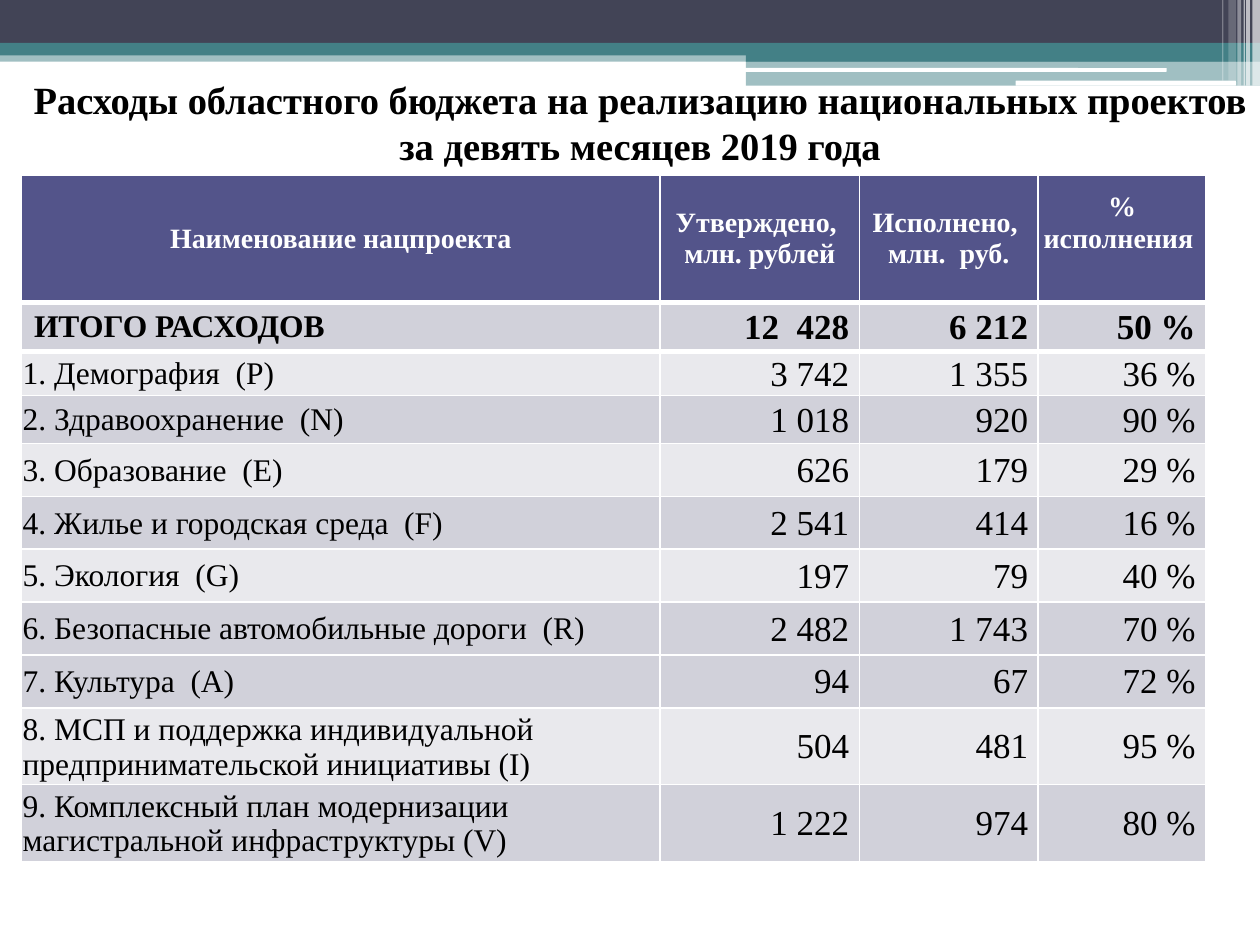
from pptx import Presentation
from pptx.dml.color import RGBColor
from pptx.enum.shapes import MSO_SHAPE
from pptx.enum.text import MSO_ANCHOR, MSO_AUTO_SIZE, PP_ALIGN
from pptx.oxml import parse_xml
from pptx.oxml.ns import nsdecls
from pptx.util import Inches, Pt

COLS, ROWS = 100, 75  # slide grid
WHITE, BLACK = "FFFFFF", "000000"
SLATE, TEAL, VIOLET = "424456", "438086", "53548A"
DARK_BAND, LIGHT_BAND = "D1D1DA", "E9E9ED"
LIGHT_ROWS = {2, 4, 6, 9}


def rgb(color):
    return RGBColor.from_string(color)


class Deck:
    font = "Times New Roman"

    def __init__(self, prs):
        self.prs = prs
        self.s = prs.slides.add_slide(prs.slide_layouts[5])

    def x(self, cols):
        return round(self.prs.slide_width * cols / COLS)

    def y(self, rows):
        return round(self.prs.slide_height * rows / ROWS)

    def box(self, x, y, w, h):
        return self.x(x), self.y(y), self.x(w), self.y(h)

    def add_lines(self, tf, lines, size, color, bold, align):
        for i, line in enumerate(lines):
            p = tf.paragraphs[0] if i == 0 else tf.add_paragraph()
            p.alignment = align
            r = p.add_run()
            r.text = line
            r.font.name, r.font.size, r.font.bold = self.font, Pt(size), bold
            r.font.color.rgb = rgb(color)

    def bar(self, x, y, w, h, color, alpha=100, rounded=False):
        kind = MSO_SHAPE.ROUNDED_RECTANGLE if rounded else MSO_SHAPE.RECTANGLE
        sp = self.s.shapes.add_shape(kind, *self.box(x, y, w, h))
        sp.shadow.inherit = False
        sp.line.fill.background()
        sp.fill.solid()
        sp.fill.fore_color.rgb = rgb(color)
        if alpha < 100:
            clr = sp._element.spPr.find(".//{*}srgbClr")
            clr.append(parse_xml(f'<a:alpha {nsdecls("a")} val="{alpha * 1000}"/>'))

    def title(self, x, y, w, h, lines, size):
        sp = self.s.shapes.title
        sp.left, sp.top, sp.width, sp.height = self.box(x, y, w, h)
        tf = sp.text_frame
        tf.word_wrap, tf.auto_size = True, MSO_AUTO_SIZE.NONE
        tf.vertical_anchor = MSO_ANCHOR.TOP
        self.add_lines(tf, lines, size, BLACK, True, PP_ALIGN.CENTER)
        self.s.shapes._spTree.append(sp._element)  # in front of the bars

    def table(self, x, y, widths, heights):
        frame = self.s.shapes.add_table(len(heights), len(widths),
                                        *self.box(x, y, sum(widths), sum(heights)))
        table = frame.table
        table.first_row = table.horz_banding = False
        for col, w in zip(table.columns, widths):
            col.width = self.x(w)
        for row, h in zip(table.rows, heights):
            row.height = self.y(h)
        return table

    def cell(self, cell, lines, size, color, fill, bold, align, insets, top, bottom):
        cell.margin_left, cell.margin_top, cell.margin_right, cell.margin_bottom = (
            Inches(v) for v in insets)
        cell.vertical_anchor = MSO_ANCHOR.MIDDLE
        tcPr = cell._tc.get_or_add_tcPr()
        for side, width in zip("LRTB", (1, 1, top, bottom)):
            tcPr.append(parse_xml(
                f'<a:ln{side} {nsdecls("a")} w="{Pt(width)}"><a:solidFill>'
                f'<a:srgbClr val="{WHITE}"/></a:solidFill></a:ln{side}>'))
        cell.fill.solid()
        cell.fill.fore_color.rgb = rgb(fill)
        self.add_lines(cell.text_frame, lines, size, color, bold, align)


HEADER = [
    ["Наименование нацпроекта"],
    ["Утверждено, ", "млн. рублей"],
    ["Исполнено, ", "млн.  руб."],
    ["% исполнения "],
]
PROJECTS = [
    ("ИТОГО РАСХОДОВ", "12  428", "6 212", "50 %"),
    ("1. Демография  (P)", "3 742", "1 355", "36 %"),
    ("2. Здравоохранение  (N)", "1 018", "920", "90 %"),
    ("3. Образование  (E)", "626", "179", "29 %"),
    ("4. Жилье и городская среда  (F)", "2 541", "414", "16 %"),
    ("5. Экология  (G)", "197", "79", "40 %"),
    ("6. Безопасные автомобильные дороги  (R)", "2 482", "1 743", "70 %"),
    ("7. Культура  (A)", "94", "67", "72 %"),
    ("8. МСП и поддержка индивидуальной предпринимательской инициативы (I)",
     "504", "481", "95 %"),
    ("9. Комплексный план модернизации магистральной инфраструктуры (V)",
     "1 222", "974", "80 %"),
]


def main():
    prs = Presentation()
    prs.slide_width, prs.slide_height = Inches(10), Inches(7.5)
    deck = Deck(prs)

    # Top band
    deck.bar(0, 4, 100, 0.9, TEAL, 50)
    deck.bar(0, 0, 100, 3.4, SLATE)
    deck.bar(0, 3.4, 100, 1, TEAL)
    deck.bar(59.2, 3.9, 40.8, 1, TEAL)
    deck.bar(59.2, 4.8, 40.8, 2, TEAL, 50)
    deck.bar(59.1, 5.4, 33.5, 0.3, WHITE, rounded=True)
    deck.bar(80.6, 6.4, 17.5, 0.4, WHITE, rounded=True)

    # Pale stripes at the right edge
    for x, w, h, alpha in [(99.4, 0.6, 6.8, 65), (98.9, 0.3, 6.8, 65),
                           (98.7, 0.1, 6.8, 60), (98.2, 0.3, 6.8, 40),
                           (97.5, 0.6, 6.4, 20), (97, 0.1, 6.4, 30)]:
        deck.bar(x, 0, w, h, WHITE, alpha)

    deck.title(0, 5.5, 101.6, 8.4,
               ["Расходы областного бюджета на реализацию национальных проектов",
                " за девять месяцев 2019 года "], 22)

    # Budget table
    heights = [10.1, 3.9, 3.5, 3.8] + [4.2] * 5 + [6.1] * 2
    table = deck.table(1.7, 13.9, [50.7, 15.8, 14.2, 13.3], heights)
    for j, lines in enumerate(HEADER):
        bottom = 0.29 if j == 3 else 0.04  # last heading sits higher
        deck.cell(table.cell(0, j), lines, 16, WHITE, VIOLET, True, PP_ALIGN.CENTER,
                  (0.02, 0.04, 0.02, bottom), 1, 3)
    for i, project in enumerate(PROJECTS, 1):
        total = i == 1
        fill = LIGHT_BAND if i in LIGHT_ROWS else DARK_BAND
        top, bottom = 3 if i <= 2 else 1, 3 if total else 1
        for j, text in enumerate(project):
            if j:
                size, align, insets = 20, PP_ALIGN.RIGHT, (0.01, 0.01, 0.08, 0)
            else:
                size, align = 18, PP_ALIGN.LEFT
                insets = (0.1, 0.05, 0.1, 0.05) if total else (0.01, 0.01, 0.01, 0)
            deck.cell(table.cell(i, j), [text], size, BLACK, fill, total, align,
                      insets, top, bottom)

    prs.save("out.pptx")


if __name__ == "__main__":
    main()
